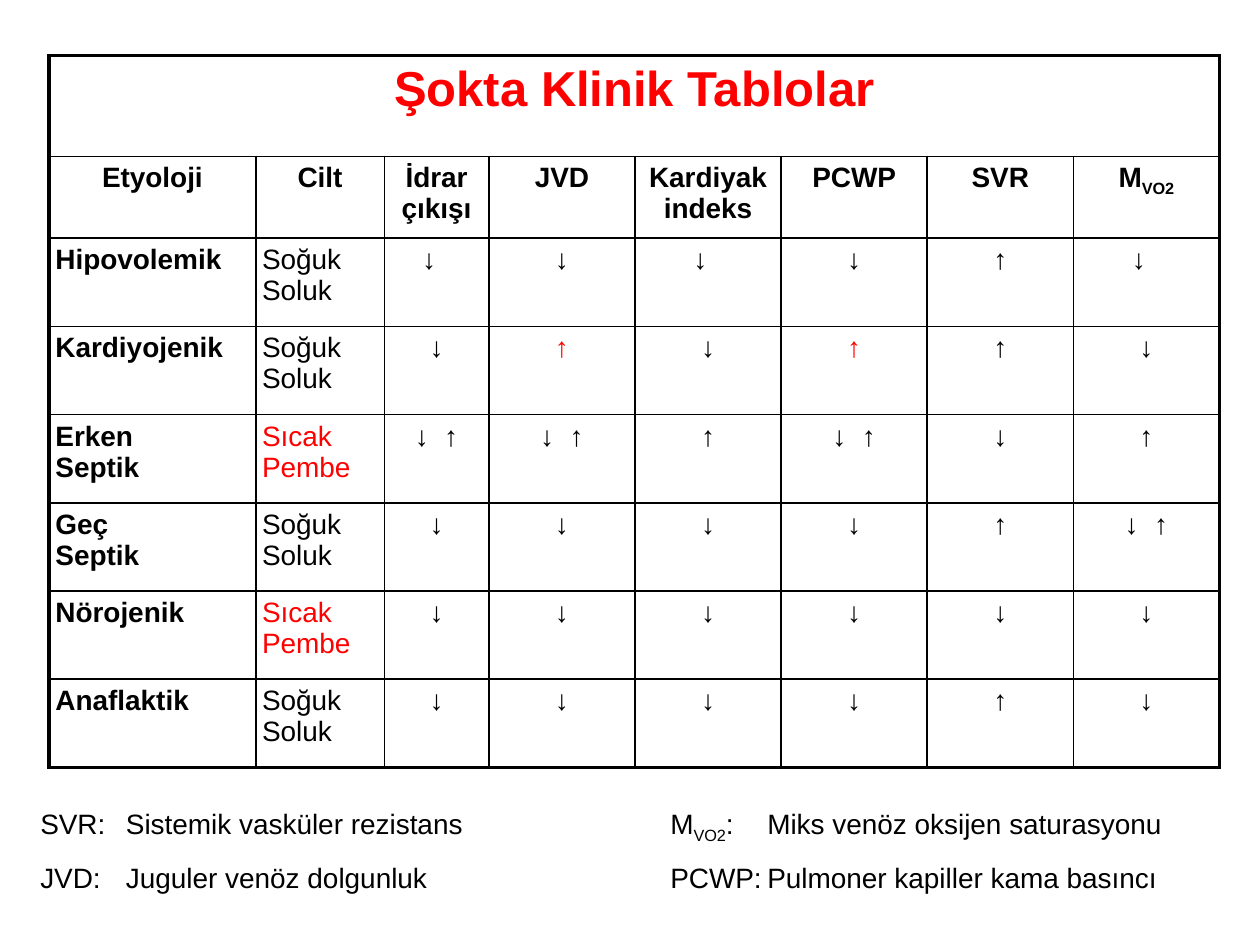
from lxml import etree
from pptx import Presentation
from pptx.dml.color import RGBColor
from pptx.enum.text import MSO_AUTO_SIZE, PP_ALIGN
from pptx.oxml.ns import qn
from pptx.util import Inches, Pt

CENTER, LEFT = PP_ALIGN.CENTER, PP_ALIGN.LEFT
FIT_SHAPE = MSO_AUTO_SIZE.SHAPE_TO_FIT_TEXT
BLACK, RED = "000000", "FF0000"
INSET = Inches(0.05)
THICK, THIN = Pt(2.25), Pt(1)


def add_run(paragraph, text, size=16, color=BLACK, bold=False, subscript=False):
    run = paragraph.add_run()
    run.text = text
    run.font.name = "Arial"
    run.font.size = Pt(size)
    run.font.bold = bold
    run.font.color.rgb = RGBColor.from_string(color)
    if subscript:
        run.font._element.set("baseline", "-25000")


def add_border(cell, side, width):
    properties = cell._tc.get_or_add_tcPr()
    line = etree.SubElement(properties, qn(f"a:ln{side}"), w=str(int(width)))
    fill = etree.SubElement(line, qn("a:solidFill"))
    etree.SubElement(fill, qn("a:srgbClr"), val=BLACK)


presentation = Presentation()
presentation.slide_width = Inches(10)
presentation.slide_height = Inches(7.5)
slide = presentation.slides.add_slide(presentation.slide_layouts[6])

# Table content: headings, then cause, skin and six arrow columns
headings = ["Etyoloji", "Cilt", "İdrar çıkışı", "JVD", "Kardiyak indeks", "PCWP", "SVR", "M"]
COLD, WARM = "Soğuk\nSoluk", "Sıcak\nPembe"
BOTH = "↓  ↑"
causes = [
    ["Hipovolemik", COLD, "↓", "↓", "↓", "↓", "↑", "↓"],
    ["Kardiyojenik", COLD, "↓", "↑", "↓", "↑", "↑", "↓"],
    ["Erken\nSeptik", WARM, BOTH, BOTH, "↑", BOTH, "↓", "↑"],
    ["Geç\nSeptik", COLD, "↓", "↓", "↓", "↓", "↑", BOTH],
    ["Nörojenik", WARM, "↓", "↓", "↓", "↓", "↓", "↓"],
    ["Anaflaktik", COLD, "↓", "↓", "↓", "↓", "↑", "↓"],
]
rows = [["Şokta Klinik Tablolar"] + [""] * 7, headings] + causes
red_arrows = {(3, 3), (3, 5)}
shifted_arrows = {(2, 2), (2, 4), (2, 7)}

# Table grid
column_widths = [1.64, 1.02, 0.83] + [1.16] * 5
row_heights = [0.8, 0.65] + [0.7] * 6
table = slide.shapes.add_table(
    len(rows), len(column_widths), Inches(0.39), Inches(0.44),
    Inches(sum(column_widths)), Inches(sum(row_heights))).table
table.first_row = False
table.horz_banding = False
for column, width in zip(table.columns, column_widths):
    column.width = Inches(width)
for row, height in zip(table.rows, row_heights):
    row.height = Inches(height)
table.cell(0, 0).merge(table.cell(0, 7))

# Table cells
last_row, last_column = len(rows) - 1, len(column_widths) - 1
for r, row_texts in enumerate(rows):
    for c, text in enumerate(row_texts):
        cell = table.cell(r, c)
        cell.margin_left = cell.margin_right = INSET
        cell.margin_top = cell.margin_bottom = INSET
        if (r, c) in shifted_arrows:
            cell.margin_right = Inches(0.17)
        add_border(cell, "L", THICK if c == 0 else THIN)
        add_border(cell, "R", THICK if c == last_column or r == 0 else THIN)
        add_border(cell, "T", THICK if r == 0 else THIN)
        add_border(cell, "B", THICK if r == last_row else THIN)
        cell.fill.background()
        if not text:
            continue

        is_red = r == 0 or text == WARM or (r, c) in red_arrows
        for index, line_text in enumerate(text.split("\n")):
            paragraphs = cell.text_frame
            paragraph = paragraphs.add_paragraph() if index else paragraphs.paragraphs[0]
            paragraph.alignment = LEFT if r > 1 and c < 2 else CENTER
            add_run(paragraph, line_text, size=28 if r == 0 else 16,
                    color=RED if is_red else BLACK, bold=r < 2 or c == 0)
add_run(table.cell(1, 7).text_frame.paragraphs[0], "VO2", bold=True, subscript=True)

# Abbreviations below the table, lined up with tab stops
legend = slide.shapes.add_textbox(Inches(0.27), Inches(6.35), Inches(9.73), Inches(0.77))
frame = legend.text_frame
frame.word_wrap = True
frame.auto_size = FIT_SHAPE
frame.margin_left = frame.margin_right = INSET
frame.margin_top = frame.margin_bottom = INSET
legend_lines = [
    [("SVR:\tSistemik vasküler rezistans\tM", False), ("VO2", True),
     (":\tMiks venöz oksijen saturasyonu", False)],
    [("JVD:\tJuguler venöz dolgunluk\tPCWP:\tPulmoner kapiller kama basıncı", False)],
]
for index, parts in enumerate(legend_lines):
    paragraph = frame.add_paragraph() if index else frame.paragraphs[0]
    paragraph.space_before = Pt(9)
    tab_list = etree.SubElement(paragraph._p.get_or_add_pPr(), qn("a:tabLst"))
    for position in (0.68, 5, 5.77):
        etree.SubElement(tab_list, qn("a:tab"), pos=str(Inches(position)), algn="l")
    for text, subscript in parts:
        add_run(paragraph, text, subscript=subscript)

presentation.save("out.pptx")
